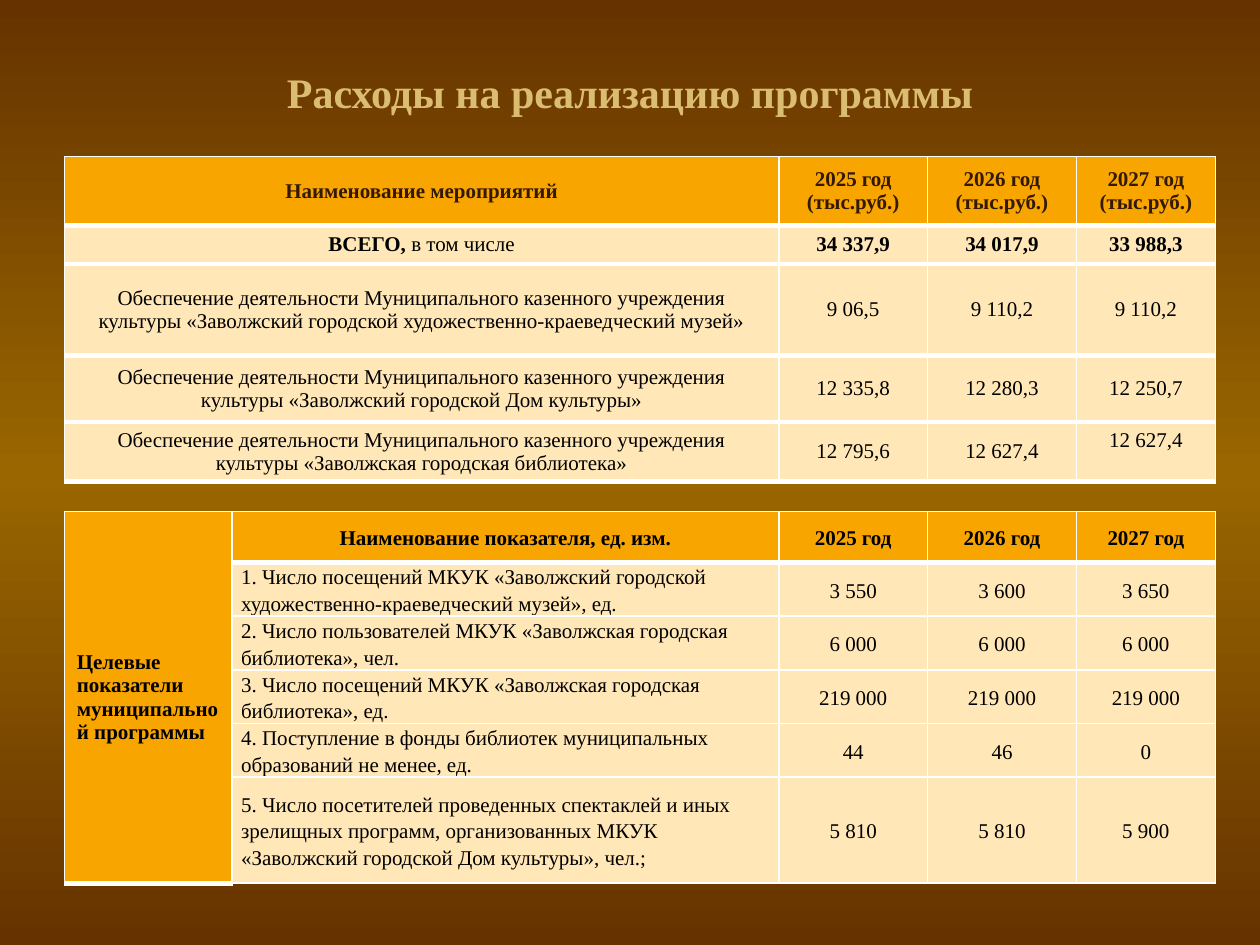
from copy import deepcopy

from lxml import etree
from pptx import Presentation
from pptx.dml.color import RGBColor
from pptx.enum import text
from pptx.oxml import ns
from pptx.util import Cm, Pt

BROWN = RGBColor(0x66, 0x33, 0x00)
OCHRE = RGBColor(0x99, 0x66, 0x00)
SAND = RGBColor(0xDB, 0xBD, 0x71)
ORANGE = RGBColor(0xF8, 0xA5, 0x00)
CREAM = RGBColor(0xFF, 0xE7, 0xB8)
DARK = RGBColor(0x33, 0x19, 0x00)
BLACK = RGBColor(0, 0, 0)
WHITE = RGBColor(0xFF, 0xFF, 0xFF)
FONT = "Times New Roman"
LEFT, CENTER = text.PP_ALIGN.LEFT, text.PP_ALIGN.CENTER
TOP, MIDDLE = text.MSO_ANCHOR.TOP, text.MSO_ANCHOR.MIDDLE

YEARS = ["2025 год", "2026 год", "2027 год"]
YEAR_WIDTHS = [3, 3, 2.8]
SUPPORT = "Обеспечение деятельности Муниципального казенного учреждения культуры "
EXPENSES = [
    ["Наименование мероприятий"] + [year + "\n(тыс.руб.)" for year in YEARS],
    ["ВСЕГО, ", "34 337,9", "34 017,9", "33 988,3"],
    [SUPPORT + "«Заволжский городской художественно-краеведческий музей»",
     "9 06,5", "9 110,2", "9 110,2"],
    [SUPPORT + "«Заволжский городской Дом культуры»",
     "12 335,8", "12 280,3", "12 250,7"],
    [SUPPORT + "«Заволжская городская библиотека»",
     "12 795,6", "12 627,4", "12 627,4"],
]
TARGETS_LABEL = "Целевые показатели муниципальной программы"
TARGETS = [
    ["Наименование показателя, ед. изм."] + YEARS,
    ["1. Число посещений МКУК «Заволжский городской "
     "художественно-краеведческий музей», ед.", "3 550", "3 600", "3 650"],
    ["2. Число пользователей МКУК «Заволжская городская библиотека», чел.",
     "6 000", "6 000", "6 000"],
    ["3. Число посещений МКУК «Заволжская городская библиотека», ед.",
     "219 000", "219 000", "219 000"],
    ["4. Поступление в фонды библиотек муниципальных образований не менее, ед.",
     "44", "46", "0"],
    ["5. Число посетителей проведенных спектаклей и иных зрелищных программ, "
     "организованных МКУК «Заволжский городской Дом культуры», чел.;",
     "5 810", "5 810", "5 900"],
]


def add_span(para, words, size=12, color=BLACK, bold=False):
    span = para.add_run()
    span.text = words
    span.font.name, span.font.size = FONT, Pt(size)
    span.font.bold, span.font.color.rgb = bold, color


def write(frame, words, align=CENTER, spacing=None, **font):
    """Fill the frame with one paragraph for each line of the words."""
    for index, line in enumerate(words.split("\n")):
        para = frame.add_paragraph() if index else frame.paragraphs[0]
        para.alignment = align
        if spacing:
            para.line_spacing = spacing
        add_span(para, line, **font)


def style_cell(cell, fill, top=1, bottom=1, margins=(0.25, 0.13), anchor=MIDDLE):
    """Set white borders (points), fill, margins (cm) and anchor."""
    props = cell._tc.get_or_add_tcPr()
    for side, weight in zip("LRTB", (1, 1, top, bottom)):
        line = etree.SubElement(props, ns.qn("a:ln" + side), w=str(Pt(weight)))
        solid = etree.SubElement(line, ns.qn("a:solidFill"))
        etree.SubElement(solid, ns.qn("a:srgbClr"), val=str(WHITE))
    cell.fill.solid()
    cell.fill.fore_color.rgb = fill
    cell.margin_left = cell.margin_right = Cm(margins[0])
    cell.margin_top = cell.margin_bottom = Cm(margins[1])
    cell.vertical_anchor = anchor


def add_grid(page, left, top, widths, heights):
    grid = page.shapes.add_table(
        len(heights), len(widths), Cm(left), Cm(top),
        Cm(sum(widths)), Cm(sum(heights))).table
    grid.first_row = grid.horz_banding = False
    for column, width in zip(grid.columns, widths):
        column.width = Cm(width)
    for row, height in zip(grid.rows, heights):
        row.height = Cm(height)
    return grid


def add_title(page, left, top, width, height):
    title = page.shapes.title
    title.left, title.top = Cm(left), Cm(top)
    title.width, title.height = Cm(width), Cm(height)
    title.text_frame.vertical_anchor = MIDDLE
    write(title.text_frame, "Расходы на реализацию программы",
          size=24, color=SAND, bold=True)


def add_expenses(page, left, top):
    grid = add_grid(page, left, top, [14.4] + YEAR_WIDTHS,
                    [1.4, 0.77, 1.85, 1.34, 1.2])
    last = (len(EXPENSES) - 1, len(YEARS))
    for r, values in enumerate(EXPENSES):
        for c, words in enumerate(values):
            cell = grid.cell(r, c)
            style_cell(cell, CREAM if r else ORANGE, top=3 if r else 1, bottom=3,
                       anchor=TOP if (r, c) == last else MIDDLE)
            write(cell.text_frame, words, bold=r < 2, color=BLACK if r else DARK)
    add_span(grid.cell(1, 0).text_frame.paragraphs[0], "в том числе")


def add_targets(page, left, top):
    grid = add_grid(page, left, top, [3.38, 11.02] + YEAR_WIDTHS,
                    [1.03] + [1.08] * 4 + [2.13])
    last = len(TARGETS) - 1
    for r, values in enumerate(TARGETS):
        style_cell(grid.cell(r, 0), ORANGE, bottom=3 if r in (0, last) else 1)
        for c, words in enumerate(values, start=1):
            cell = grid.cell(r, c)
            style_cell(cell, CREAM if r else ORANGE, top=3 if r == 1 else 1,
                       bottom=1 if r else 3, margins=(0.18, 0))
            write(cell.text_frame, words, spacing=1.15, bold=r == 0,
                  align=LEFT if r and c == 1 else CENTER)
    label = grid.cell(0, 0)
    label.merge(grid.cell(last, 0))
    write(label.text_frame, TARGETS_LABEL, align=LEFT, bold=True)


def paint_background(page):
    fill = page.background.fill
    fill.gradient()
    fill.gradient_angle = 270
    stops = page.element.find(".//" + ns.qn("a:gsLst"))
    stops.insert(1, deepcopy(stops[0]))
    for stop, place, color in zip(fill.gradient_stops, (0, 0.5, 1),
                                  (BROWN, OCHRE, BROWN)):
        stop.position = place
        stop.color.rgb = color


def main():
    deck = Presentation()
    deck.slide_width, deck.slide_height = Cm(25.4), Cm(19.05)
    page = deck.slides.add_slide(deck.slide_layouts[5])
    paint_background(page)
    add_title(page, 1.27, 0.76, 22.86, 2.16)
    add_expenses(page, 1.3, 3.15)
    add_targets(page, 1.3, 10.31)
    deck.save("out.pptx")


if __name__ == "__main__":
    main()
